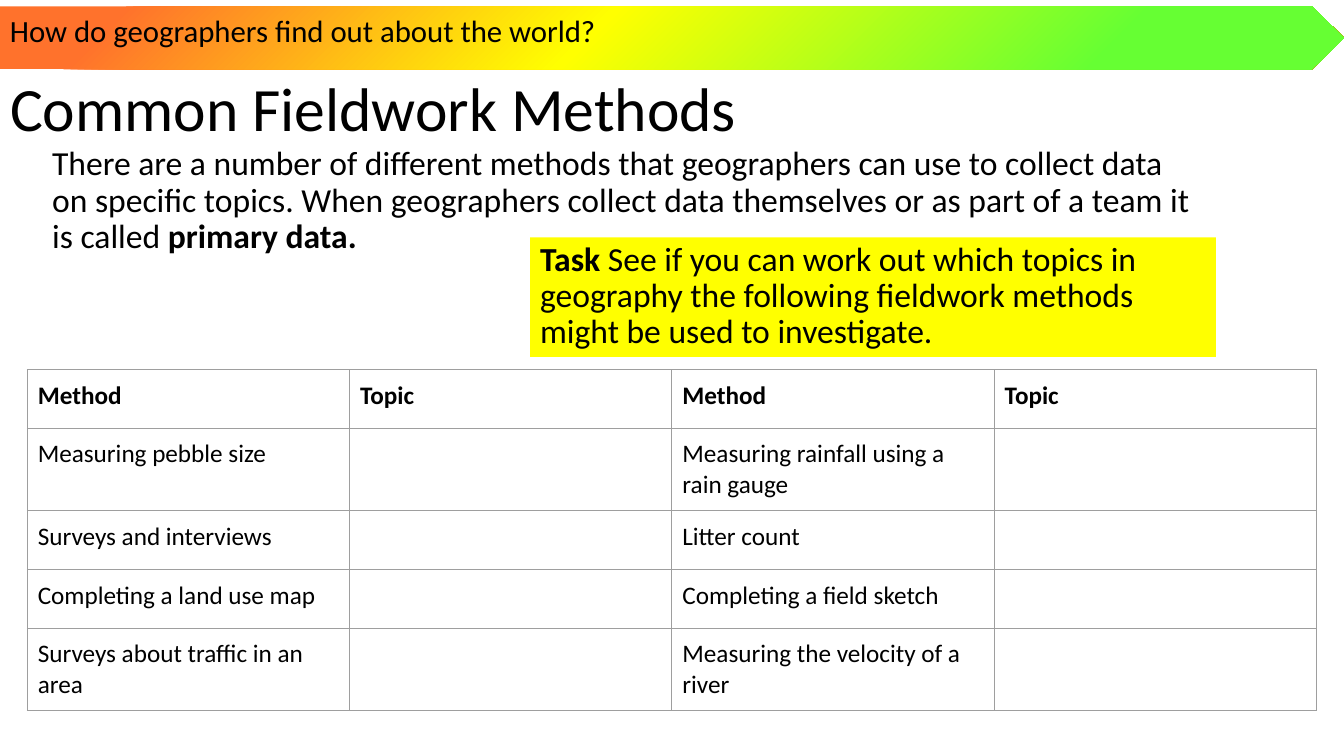
"""Builds the slide on common geography fieldwork methods."""
from pptx import Presentation
from pptx.dml.color import RGBColor
from pptx.enum.shapes import MSO_SHAPE
from pptx.enum.text import MSO_ANCHOR, MSO_AUTO_SIZE, PP_ALIGN
from pptx.oxml import parse_xml
from pptx.oxml.ns import nsdecls
from pptx.util import Pt

PX = 9525
FONT = "Calibri"
RIGHT_ARROW, RECTANGLE = MSO_SHAPE.RIGHT_ARROW, MSO_SHAPE.RECTANGLE
TOP, MIDDLE = MSO_ANCHOR.TOP, MSO_ANCHOR.MIDDLE
NO_AUTOFIT, LEFT = MSO_AUTO_SIZE.NONE, PP_ALIGN.LEFT
COLORS = {
    "text": "000000",
    "grid": "9E9E9E",
    "green": "66FF33",
    "yellow": "FFFF00",
    "orange": "FF722C",
}


def place(shape, left, top, width, height):
    shape.left, shape.top = left * PX, top * PX
    shape.width, shape.height = width * PX, height * PX


def write(frame, size, runs, anchor=TOP, line_spacing=1.0):
    frame.word_wrap = True
    frame.auto_size = NO_AUTOFIT
    frame.vertical_anchor = anchor
    paragraph = frame.paragraphs[0]
    paragraph.alignment = LEFT
    paragraph.line_spacing = line_spacing
    paragraph.space_before = Pt(0)
    for words, bold in runs:
        run = paragraph.add_run()
        run.text = words
        run.font.name = FONT
        run.font.size = Pt(size)
        run.font.bold = bold
        run.font.color.rgb = RGBColor.from_string(COLORS["text"])
    return paragraph


deck = Presentation()
deck.slide_width, deck.slide_height = 1280 * PX, 720 * PX
slide = deck.slides.add_slide(deck.slide_layouts[1])

heading, intro = slide.placeholders
place(heading, 0, 37, 1104, 139)
write(heading.text_frame, 44, [("Common Fieldwork Methods", False)], MIDDLE, 0.9)

place(intro, 40, 135, 1104, 237)
intro_paragraph = write(intro.text_frame, 24, [
    ("There are a number of different methods that geographers can use to "
     "collect data on specific topics. When geographers collect data "
     "themselves or as part of a team it is called ", False),
    ("primary data.", True),
], line_spacing=0.9)
intro_properties = intro_paragraph._p.get_or_add_pPr()
intro_properties.set("marL", "0")
intro_properties.set("indent", "0")
intro_properties.append(parse_xml(f"<a:buNone {nsdecls('a')}/>"))

METHODS = [
    ("Method", "Topic", "Method", "Topic"),
    ("Measuring pebble size", "", "Measuring rainfall using a rain gauge", ""),
    ("Surveys and interviews", "", "Litter count", ""),
    ("Completing a land use map", "", "Completing a field sketch", ""),
    ("Surveys about traffic in an area", "", "Measuring the velocity of a river", ""),
]
COLUMN_WIDTH, ROW_HEIGHT, CELL_MARGIN = 307, 56, 10
methods_grid = slide.shapes.add_table(
    len(METHODS), 4, 26 * PX, 352 * PX,
    4 * COLUMN_WIDTH * PX, len(METHODS) * ROW_HEIGHT * PX).table
methods_grid.first_row = False
methods_grid.horz_banding = False
for column in methods_grid.columns:
    column.width = COLUMN_WIDTH * PX
for row_number, entries in enumerate(METHODS):
    methods_grid.rows[row_number].height = ROW_HEIGHT * PX
    for column_number, entry in enumerate(entries):
        cell = methods_grid.cell(row_number, column_number)
        cell.margin_left = cell.margin_right = CELL_MARGIN * PX
        cell.margin_top = cell.margin_bottom = CELL_MARGIN * PX
        for side in ("lnL", "lnR", "lnT", "lnB"):
            cell._tc.get_or_add_tcPr().append(parse_xml(
                f'<a:{side} {nsdecls("a")} w="{Pt(0.75)}"><a:solidFill>'
                f'<a:srgbClr val="{COLORS["grid"]}"/></a:solidFill></a:{side}>'))
        cell.fill.background()
        if entry:
            write(cell.text_frame, 18, [(entry, row_number == 0)])

banner = slide.shapes.add_shape(RIGHT_ARROW, 0, 6 * PX, 1280 * PX, 60 * PX)
banner.adjustments[0] = 1
banner.adjustments[1] = 0.51
banner.shadow.inherit = False
banner.line.fill.background()
banner.fill.solid()
BANNER_STOPS = [(0, "green"), (18, "green"), (56, "yellow"), (91, "orange"), (100, "orange")]
stops = "".join(
    f'<a:gs pos="{percent * 1000}"><a:srgbClr val="{COLORS[color]}"/></a:gs>'
    for percent, color in BANNER_STOPS)
gradient = parse_xml(
    f'<a:gradFill {nsdecls("a")} rotWithShape="1"><a:gsLst>{stops}</a:gsLst>'
    '<a:path path="circle"><a:fillToRect l="100000" t="100000"/></a:path></a:gradFill>')
banner_properties = banner._element.spPr
banner_properties.replace(banner_properties.solidFill, gradient)
write(banner.text_frame, 22, [("How do geographers find out about the world?", False)])

task = slide.shapes.add_shape(RECTANGLE, 505 * PX, 226 * PX, 653 * PX, 114 * PX)
task.shadow.inherit = False
task.line.fill.background()
task.fill.solid()
task.fill.fore_color.rgb = RGBColor.from_string(COLORS["yellow"])
write(task.text_frame, 24, [
    ("Task", True),
    (" See if you can work out which topics in geography the following "
     "fieldwork methods might be used to investigate.", False),
], line_spacing=0.9)

deck.save("out.pptx")
